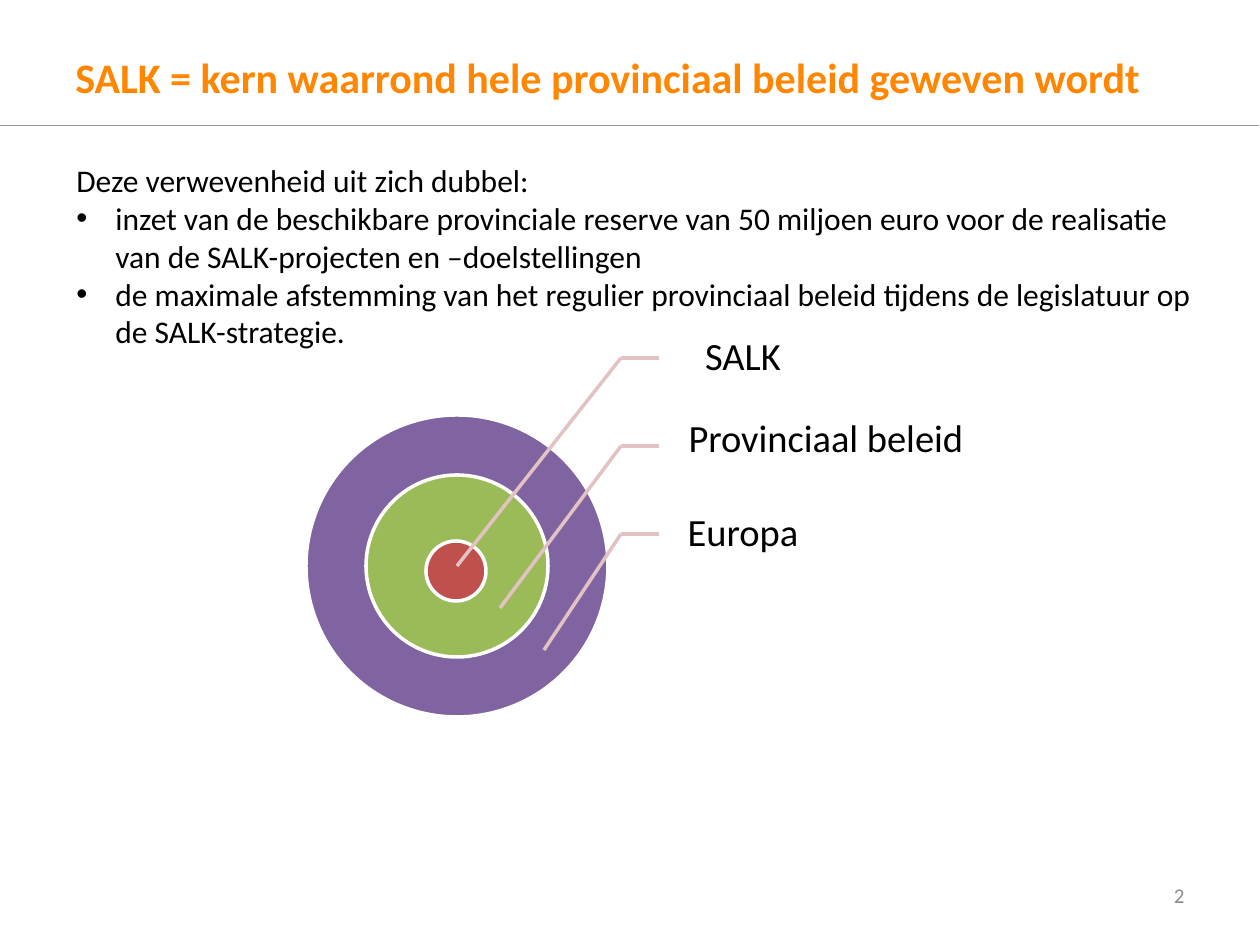
from pptx import Presentation
from pptx.util import Pt
from pptx.dml.color import RGBColor
from pptx.enum.shapes import MSO_SHAPE as Shape, MSO_CONNECTOR as Conn
from pptx.enum.text import PP_ALIGN as Align, MSO_ANCHOR as Anchor
from pptx.oxml.ns import qn
from lxml.etree import SubElement

# Content
TITLE = "SALK = kern waarrond hele provinciaal beleid geweven wordt"
INTRO = "Deze verwevenheid uit zich dubbel:"
POINTS = [
    "inzet van de beschikbare provinciale reserve van 50 miljoen euro voor de "
    "realisatie van de SALK-projecten en –doelstellingen",
    "de maximale afstemming van het regulier provinciaal beleid tijdens de "
    "legislatuur op de SALK-strategie.",
]
PAGE = "2"
# centre x, centre y, diameter, colour
RINGS = [(457, 566, 302, "violet"), (457, 566, 182, "green"), (456, 571, 60, "red")]
# text, box left, top, width, leader target
LABELS = [
    ("SALK", 659, 314, 151, (457, 566)),
    ("Provinciaal beleid", 663, 396, 309, (500, 608)),
    ("Europa", 659, 490, 151, (544, 650)),
]
COLORS = {
    "title": "FF8600", "text": "000000", "page": "8C8C8C", "rule": "97989A",
    "violet": "8064A2", "green": "9BBB59", "red": "C0504D",
    "white": "FFFFFF", "leader": "E2C2C2",
}
FONT = "Calibri"
SCALE = 914400 / 126
BEND, TIP, FIRST, STEP = 621, 659, 358, 88  # leader lines
HANG = 39  # bullet indent


def px(n):
    return round(n * SCALE)


def rgb(name):
    return RGBColor.from_string(COLORS[name])


def add_text(box, lines, size, color="text", bold=False, align=Align.LEFT,
             anchor=Anchor.TOP, inset=None):
    frame = slide.shapes.add_textbox(*map(px, box)).text_frame
    frame.word_wrap = True
    frame.vertical_anchor = anchor
    if inset:
        (frame.margin_left, frame.margin_top,
         frame.margin_right, frame.margin_bottom) = map(px, inset)
    frame.text = "\n".join(lines)
    for para in frame.paragraphs:
        para.alignment = align
        font = para.font
        font.name, font.size, font.bold = FONT, Pt(size), bold
        font.color.rgb = rgb(color)
    return frame.paragraphs


def add_bullet(para):
    props = para._p.get_or_add_pPr()
    props.set("marL", str(px(HANG)))
    props.set("indent", str(-px(HANG)))
    mark = SubElement(props, qn("a:buChar"))
    mark.set("char", "•")
    props.insert(0, mark)
    face = SubElement(props, qn("a:buFont"))
    face.set("typeface", "Arial")
    props.insert(0, face)


def add_line(start, end, color, width):
    line = slide.shapes.add_connector(Conn.STRAIGHT, *map(px, start + end))
    line.line.color.rgb = rgb(color)
    line.line.width = Pt(width)
    SubElement(line._element.spPr, qn("a:effectLst"))


deck = Presentation()
deck.slide_width, deck.slide_height = px(1260), px(945)
slide = deck.slides.add_slide(deck.slide_layouts[6])

# Header and page number
add_line((0, 125), (1259, 125), "rule", 0.5)
add_text((63, 27, 1134, 99), [TITLE], 24, "title", bold=True, anchor=Anchor.MIDDLE)
add_text((903, 876, 294, 50), [PAGE], 12, "page", align=Align.RIGHT)

# Concentric rings
for x, y, size, color in RINGS:
    ring = slide.shapes.add_shape(
        Shape.OVAL, *map(px, (x - size / 2, y - size / 2, size, size)))
    ring.shadow.inherit = False
    ring.fill.solid()
    ring.fill.fore_color.rgb = rgb(color)
    ring.line.color.rgb = rgb("white")
    ring.line.width = Pt(2)

# Labels with bent leader lines
for i, (text, left, top, width, target) in enumerate(LABELS):
    para, = add_text((left, top, width, 88), [text], 22, align=Align.CENTER,
                     anchor=Anchor.MIDDLE, inset=(21, 4, 4, 4))
    para.line_spacing = 0.9
    y = FIRST + i * STEP
    add_line((BEND, y), (TIP, y), "leader", 2)
    add_line((BEND, y), target, "leader", 2)

# Body text
paras = add_text((64, 155, 1150, 585), [INTRO] + POINTS, 18)
for para in paras[1:]:
    add_bullet(para)

deck.save("out.pptx")
